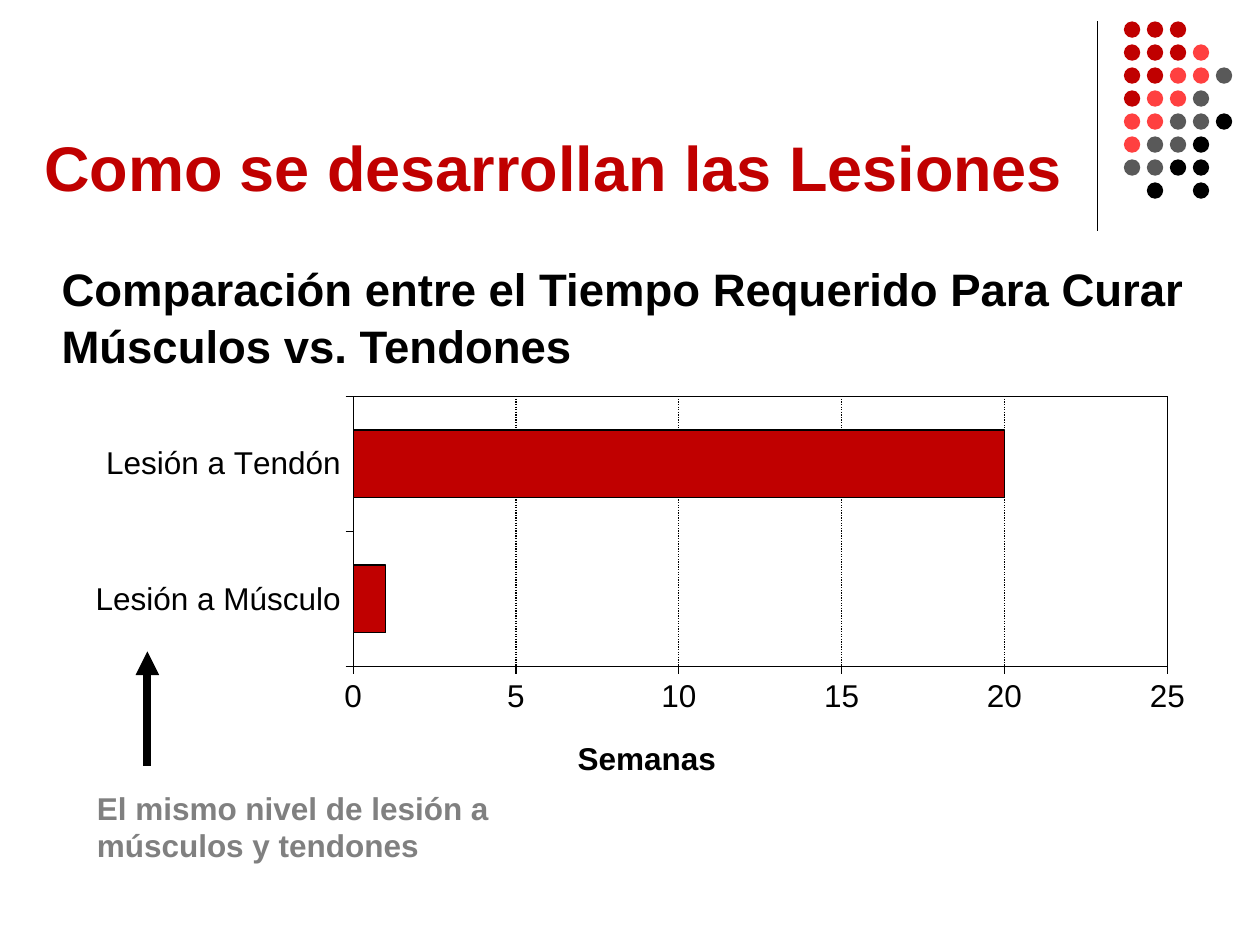
from dataclasses import dataclass

from lxml import etree
from pptx import Presentation
from pptx.chart.data import CategoryChartData
from pptx.dml.color import RGBColor
from pptx.enum.chart import XL_CHART_TYPE, XL_TICK_MARK
from pptx.enum.dml import MSO_LINE
from pptx.enum.shapes import MSO_CONNECTOR, MSO_SHAPE
from pptx.enum.text import MSO_ANCHOR, PP_ALIGN
from pptx.oxml import parse_xml
from pptx.oxml.ns import nsdecls, qn
from pptx.util import Inches, Pt

BAR = XL_CHART_TYPE.BAR_CLUSTERED
OUT = XL_TICK_MARK.OUTSIDE
DOTTED = MSO_LINE.ROUND_DOT
STRAIGHT = MSO_CONNECTOR.STRAIGHT
OVAL = MSO_SHAPE.OVAL
TOP, BOTTOM = MSO_ANCHOR.TOP, MSO_ANCHOR.BOTTOM
LEFT = PP_ALIGN.LEFT


@dataclass(frozen=True)
class Theme:
    font: str = "Arial"
    red: str = "C00000"
    light: str = "FF4040"
    dark: str = "595959"
    gray: str = "808080"
    black: str = "000000"
    title: float = 36
    lead: float = 26
    small: float = 18
    thin: float = 0.75


@dataclass(frozen=True)
class Box:
    x: float
    y: float
    w: float
    h: float

    def emu(self) -> tuple:
        return tuple(Inches(n) for n in (self.x, self.y, self.w, self.h))


@dataclass(frozen=True)
class Rule:
    x: float
    top: float
    end: float
    width: float
    arrow: bool = False


THEME = Theme()
DOT_COLORS = {"r": THEME.red, "l": THEME.light, "d": THEME.dark, "k": THEME.black}
DOT_ROWS = ("rrr", "rrrl", "rrlld", "rlld", "llddk", "lddk", "ddkk", " k k")
DOT_LEFT, DOT_TOP, DOT_SIZE = 8.92, 0.17, 0.13
DOT_STEP = (9.65 - DOT_LEFT) / 4
DIVIDER = Rule(8.71, 0.17, 1.83, THEME.thin)
ARROW = Rule(1.17, 5.17, 6.08, 4.5, arrow=True)


def style(font, size: float, color: str = THEME.black, bold: bool = False) -> None:
    font.name, font.size, font.bold = THEME.font, Pt(size), bold
    font.color.rgb = RGBColor.from_string(color)


def write(shape, text: str, *, size: float, color: str = THEME.black,
          anchor=TOP, spacing: float = 1.0) -> None:
    frame = shape.text_frame
    frame.word_wrap = True
    frame.vertical_anchor = anchor
    par = frame.paragraphs[0]
    par.alignment = LEFT
    par.line_spacing = spacing
    run = par.add_run()
    run.text = text
    style(run.font, size, color, bold=True)


def stroke(line, width: float = THEME.thin) -> None:
    line.color.rgb = RGBColor.from_string(THEME.black)
    line.width = Pt(width)


def draw_rule(slide, rule: Rule) -> None:
    line = slide.shapes.add_connector(STRAIGHT, Inches(rule.x), Inches(rule.top),
                                      Inches(rule.x), Inches(rule.end))
    stroke(line.line, rule.width)
    props = line._element.spPr
    if rule.arrow:
        etree.SubElement(props.find(qn("a:ln")), qn("a:headEnd"), type="triangle")
    etree.SubElement(props, qn("a:effectLst"))


def draw_dots(slide) -> None:
    group = slide.shapes.add_group_shape()
    for row, marks in enumerate(DOT_ROWS):
        for col, mark in enumerate(marks):
            if mark not in DOT_COLORS:
                continue
            box = Box(DOT_LEFT + col * DOT_STEP, DOT_TOP + row * DOT_STEP,
                      DOT_SIZE, DOT_SIZE)
            dot = group.shapes.add_shape(OVAL, *box.emu())
            dot.shadow.inherit = False
            dot.fill.solid()
            dot.fill.fore_color.rgb = RGBColor.from_string(DOT_COLORS[mark])
            dot.line.fill.background()


def layout_xml(inner: bool = False, **place: float):
    """Build a manual chart layout from fractions of the chart's size."""
    keys = [("layoutTarget", "inner")] if inner else []
    keys += [("xMode", "edge"), ("yMode", "edge"), *place.items()]
    body = "".join(f'<c:{key} val="{val}"/>' for key, val in keys)
    return parse_xml(f'<c:layout {nsdecls("c")}><c:manualLayout>{body}'
                     "</c:manualLayout></c:layout>")


def draw_chart(slide, box: Box) -> None:
    data = CategoryChartData()
    data.categories = ["Lesión a Músculo", "Lesión a Tendón"]
    data.add_series("Series 1", (1, 20))
    chart = slide.shapes.add_chart(BAR, *box.emu(), data).chart
    chart.has_legend = chart.has_title = False
    style(chart.font, THEME.small)

    plot = chart.plots[0]
    plot.gap_width = 100
    plot.vary_by_categories = False
    bars = plot.series[0].format
    bars.fill.solid()
    bars.fill.fore_color.rgb = RGBColor.from_string(THEME.red)
    stroke(bars.line)

    for axis in (chart.category_axis, chart.value_axis):
        axis.major_tick_mark = OUT
        stroke(axis.format.line)
    weeks = chart.value_axis
    weeks.minimum_scale, weeks.maximum_scale, weeks.major_unit = 0, 25, 5
    weeks.has_major_gridlines = True
    grid = weeks.major_gridlines.format.line
    stroke(grid)
    grid.dash_style = DOTTED
    run = weeks.axis_title.text_frame.paragraphs[0].add_run()
    run.text = "Semanas"
    style(run.font, THEME.small, bold=True)

    title = weeks.axis_title._element
    for old in title.findall(qn("c:layout")):
        title.remove(old)
    title.find(qn("c:tx")).addnext(layout_xml(x=0.44, y=0.84))
    area = chart._chartSpace.chart.plotArea
    for old in area.findall(qn("c:layout")):
        area.remove(old)
    area.insert(0, layout_xml(inner=True, x=0.247, y=0.02, w=0.718, h=0.66))
    area.append(parse_xml(
        f'<c:spPr {nsdecls("c", "a")}><a:noFill/><a:ln w="{Pt(THEME.thin)}">'
        f'<a:solidFill><a:srgbClr val="{THEME.black}"/></a:solidFill></a:ln></c:spPr>'))


def main() -> None:
    deck = Presentation()
    deck.slide_width, deck.slide_height = Inches(10), Inches(7.5)
    slide = deck.slides.add_slide(deck.slide_layouts[5])
    draw_rule(slide, DIVIDER)
    draw_dots(slide)

    title = slide.shapes.title
    title.left, title.top, title.width, title.height = Box(0.25, 0.25, 8.42, 1.42).emu()
    write(title, "Como se desarrollan las Lesiones", size=THEME.title,
          color=THEME.red, anchor=BOTTOM)
    lead = slide.shapes.add_textbox(*Box(0.39, 2, 9.44, 0.98).emu())
    write(lead, "Comparación entre el Tiempo Requerido Para Curar Músculos vs. Tendones",
          size=THEME.lead, spacing=1.05)
    draw_chart(slide, Box(0.58, 3.08, 9, 3.25))
    note = slide.shapes.add_textbox(*Box(0.67, 6.21, 3.58, 0.71).emu())
    write(note, "El mismo nivel de lesión a músculos y tendones",
          size=THEME.small, color=THEME.gray)
    draw_rule(slide, ARROW)
    deck.save("out.pptx")


if __name__ == "__main__":
    main()
